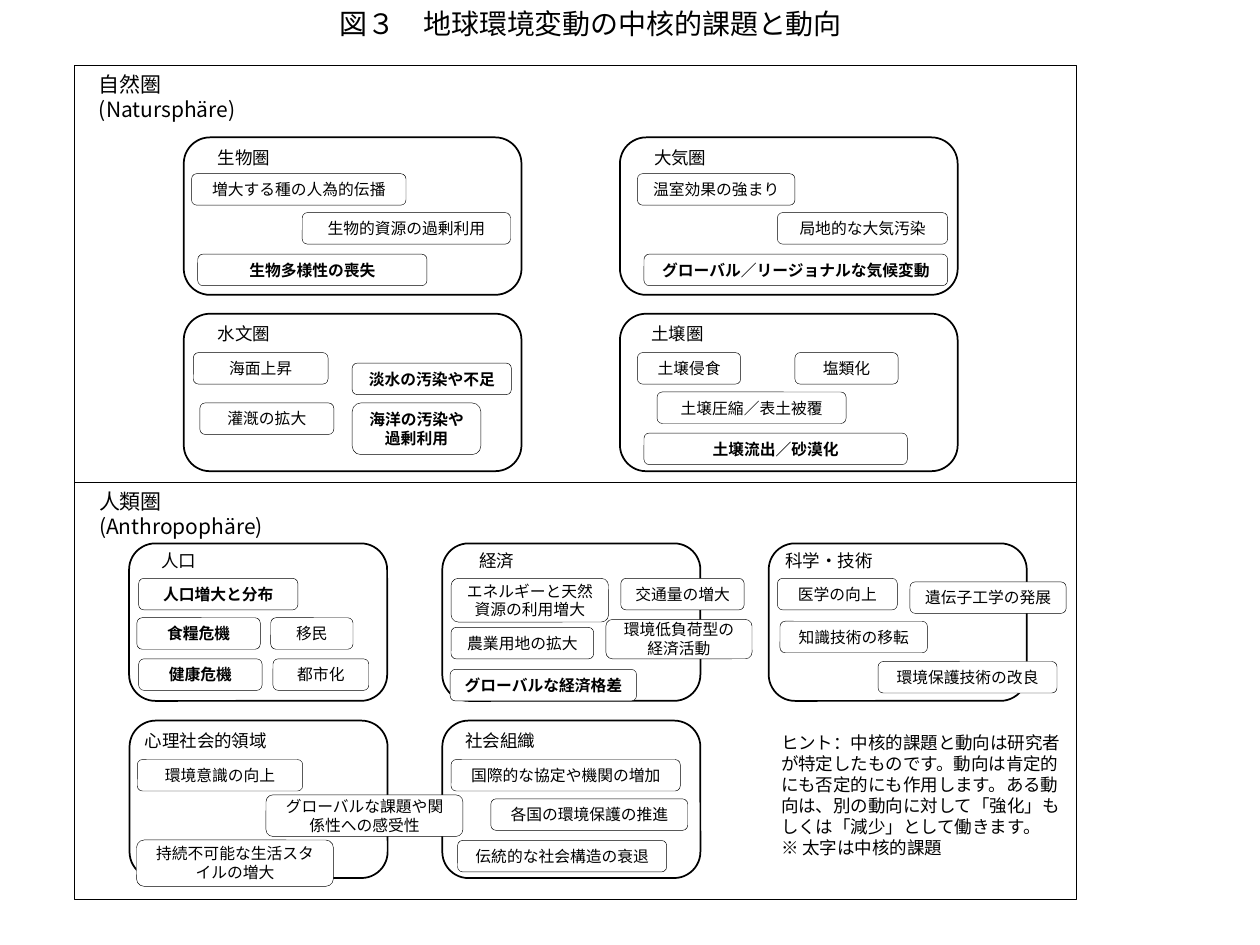
from dataclasses import dataclass
from typing import Optional

from lxml.etree import SubElement
from pptx import Presentation
from pptx.dml.color import RGBColor
from pptx.enum.shapes import MSO_SHAPE as Preset
from pptx.enum.text import MSO_ANCHOR as Anchor, MSO_AUTO_SIZE as AutoSize, PP_ALIGN as Align
from pptx.oxml.ns import qn
from pptx.util import Pt

FONT = "Noto Sans CJK JP"
BLACK, WHITE = "000000", "FFFFFF"
THIN, THICK = 0.25, 1
SPHERE_HEIGHT, LABEL_HEIGHT, TOPIC_HEIGHT = 90, 23, 18
NATURE_WIDTH, HUMAN_WIDTH = 193, 147.5
PANEL_LEFT, PANEL_TOP, PANEL_WIDTH, PANEL_HEIGHT = 42.5, 37.5, 572.5, 238.25


@dataclass
class Topic:
    left: float
    top: float
    width: float
    text: str
    core: bool = False
    height: float = TOPIC_HEIGHT


@dataclass
class Sphere:
    left: float
    top: float
    width: float
    label: str
    label_width: float
    topics: list[Topic]
    label_dx: float = 0
    label_dy: float = 0


@dataclass
class Caption:
    left: float
    top: float
    width: float
    height: float
    size: float
    text: str


CAPTIONS = [
    Caption(187, 0, 305.5, 26.5, 16, "図３　地球環境変動の中核的課題と動向"),
    Caption(49.5, 37.5, 130, 36, 12, "自然圏\n(Natursphäre)"),
    Caption(49.5, 275.75, 142, 36, 12, "人類圏\n(Anthropophäre)"),
    Caption(439.25, 414.5, 175.5, 80, 10,
            "ヒント：中核的課題と動向は研究者が特定したものです。動向は肯定的にも否定的にも作用します。"
            "ある動向は、別の動向に対して「強化」もしくは「減少」として働きます。\n※ 太字は中核的課題"),
]

SPHERES = [
    Sphere(105, 78.5, NATURE_WIDTH, "生物圏", 69, [
        Topic(109.5, 99.25, 122.5, "増大する種の人為的伝播"),
        Topic(172.75, 121.5, 119, "生物的資源の過剰利用"),
        Topic(113, 145.25, 131, "生物多様性の喪失", True),
    ]),
    Sphere(354.25, 78.5, NATURE_WIDTH, "大気圏", 69, [
        Topic(364.25, 99.25, 90, "温室効果の強まり"),
        Topic(444.25, 121.5, 97.25, "局地的な大気汚染"),
        Topic(368, 145.25, 173.5, "グローバル／リージョナルな気候変動", True),
    ]),
    Sphere(105, 179.25, NATURE_WIDTH, "水文圏", 69, [
        Topic(110.5, 201.5, 77, "海面上昇"),
        Topic(201.25, 207.5, 91, "淡水の汚染や不足", True),
        Topic(114.25, 230.25, 76.5, "灌漑の拡大"),
        Topic(201.25, 230.25, 73.5, "海洋の汚染や過剰利用", True, 29.5),
    ]),
    Sphere(354.25, 179.25, NATURE_WIDTH, "土壌圏", 69, [
        Topic(364.25, 201.5, 59, "土壌侵食"),
        Topic(454.25, 201.5, 59, "塩類化"),
        Topic(375.5, 224, 108, "土壌圧縮／表土被覆"),
        Topic(368, 247.5, 150.5, "土壌流出／砂漠化", True),
    ], label_dx=-1.5),
    Sphere(73.75, 310.5, HUMAN_WIDTH, "人口", 57, [
        Topic(79.25, 330.5, 91, "人口増大と分布", True),
        Topic(78.25, 353, 70.5, "食糧危機", True),
        Topic(154.75, 353, 47, "移民"),
        Topic(79.25, 376.5, 70.5, "健康危機", True),
        Topic(156, 376.5, 54.75, "都市化"),
    ], label_dy=-1.5),
    Sphere(252.75, 310.5, HUMAN_WIDTH, "経済", 62, [
        Topic(257.75, 330.5, 90, "エネルギーと天然資源の利用増大", height=25),
        Topic(354.75, 330.5, 70.5, "交通量の増大"),
        Topic(257.75, 358.5, 81.5, "農業用地の拡大"),
        Topic(346.25, 354, 83.5, "環境低負荷型の経済活動", height=22.5),
        Topic(257.25, 382.5, 106.5, "グローバルな経済格差", True),
    ], label_dy=-1.5),
    Sphere(439.25, 310.5, HUMAN_WIDTH, "科学・技術", 69, [
        Topic(444.25, 330.5, 68.5, "医学の向上"),
        Topic(520, 332.5, 89.25, "遺伝子工学の発展"),
        Topic(445.75, 355, 84.25, "知識技術の移転"),
        Topic(501.75, 378, 102.25, "環境保護技術の改良"),
    ], label_dy=-1.5),
    Sphere(74, 411.75, HUMAN_WIDTH, "心理社会的領域", 87.25, [
        Topic(78.5, 434, 94.5, "環境意識の向上"),
        Topic(152, 454.25, 112.5, "グローバルな課題や関係性への感受性", height=23.75),
        Topic(78, 480, 112.5, "持続不可能な生活スタイルの増大", height=26.5),
    ]),
    Sphere(252.75, 411.75, HUMAN_WIDTH, "社会組織", 69, [
        Topic(257.75, 434, 131, "国際的な協定や機関の増加"),
        Topic(280.5, 456.5, 112.5, "各国の環境保護の推進"),
        Topic(261.5, 480.25, 119.5, "伝統的な社会構造の衰退"),
    ], label_dx=-1.5),
]


def color(code: str) -> RGBColor:
    return RGBColor.from_string(code)


def write(frame, text: str, size: float, align: Align, bold: bool = False, **layout) -> None:
    for attribute, value in {"word_wrap": True, **layout}.items():
        setattr(frame, attribute, value)
    frame.text = text
    font_values = {"name": FONT, "size": Pt(size), "bold": bold}
    for paragraph in frame.paragraphs:
        paragraph.alignment = align
        for run in paragraph.runs:
            for attribute, value in font_values.items():
                setattr(run.font, attribute, value)
            run.font.color.rgb = color(BLACK)
            SubElement(run._r.get_or_add_rPr(), qn("a:ea")).set("typeface", FONT)


def draw_box(shapes, preset: Preset, left: float, top: float, width: float, height: float,
             outline: Optional[float] = None, fill: Optional[str] = None):
    box = shapes.add_shape(preset, Pt(left), Pt(top), Pt(width), Pt(height))
    box.shadow.inherit = False
    if fill:
        box.fill.solid()
        box.fill.fore_color.rgb = color(fill)
    else:
        box.fill.background()
    if outline:
        box.line.color.rgb = color(BLACK)
        box.line.width = Pt(outline)
    else:
        box.line.fill.background()
    return box


def draw_sphere(shapes, sphere: Sphere) -> None:
    draw_box(shapes, Preset.ROUNDED_RECTANGLE, sphere.left, sphere.top,
             sphere.width, SPHERE_HEIGHT, THICK, WHITE)


def draw_label(shapes, sphere: Sphere) -> None:
    label = draw_box(shapes, Preset.ROUNDED_RECTANGLE, sphere.left + sphere.label_dx,
                     sphere.top + sphere.label_dy, sphere.label_width, LABEL_HEIGHT)
    write(label.text_frame, sphere.label, 10, Align.CENTER, vertical_anchor=Anchor.MIDDLE)


def draw_topic(shapes, topic: Topic) -> None:
    box = draw_box(shapes, Preset.ROUNDED_RECTANGLE, topic.left, topic.top,
                   topic.width, topic.height, THIN, WHITE)
    write(box.text_frame, topic.text, 9, Align.CENTER, topic.core, vertical_anchor=Anchor.MIDDLE)


def draw_caption(shapes, caption: Caption) -> None:
    box = shapes.add_textbox(Pt(caption.left), Pt(caption.top), Pt(caption.width), Pt(caption.height))
    write(box.text_frame, caption.text, caption.size, Align.LEFT, auto_size=AutoSize.SHAPE_TO_FIT_TEXT)


def main() -> None:
    deck = Presentation()
    deck.slide_width, deck.slide_height = Pt(720), Pt(540)
    shapes = deck.slides.add_slide(deck.slide_layouts[6]).shapes
    for row in range(2):
        draw_box(shapes, Preset.RECTANGLE, PANEL_LEFT, PANEL_TOP + row * PANEL_HEIGHT,
                 PANEL_WIDTH, PANEL_HEIGHT, THIN)
    for sphere in SPHERES:
        draw_sphere(shapes, sphere)
    for caption in CAPTIONS:
        draw_caption(shapes, caption)
    for sphere in SPHERES:
        draw_label(shapes, sphere)
        for topic in sphere.topics:
            draw_topic(shapes, topic)
    deck.save("out.pptx")


if __name__ == "__main__":
    main()
